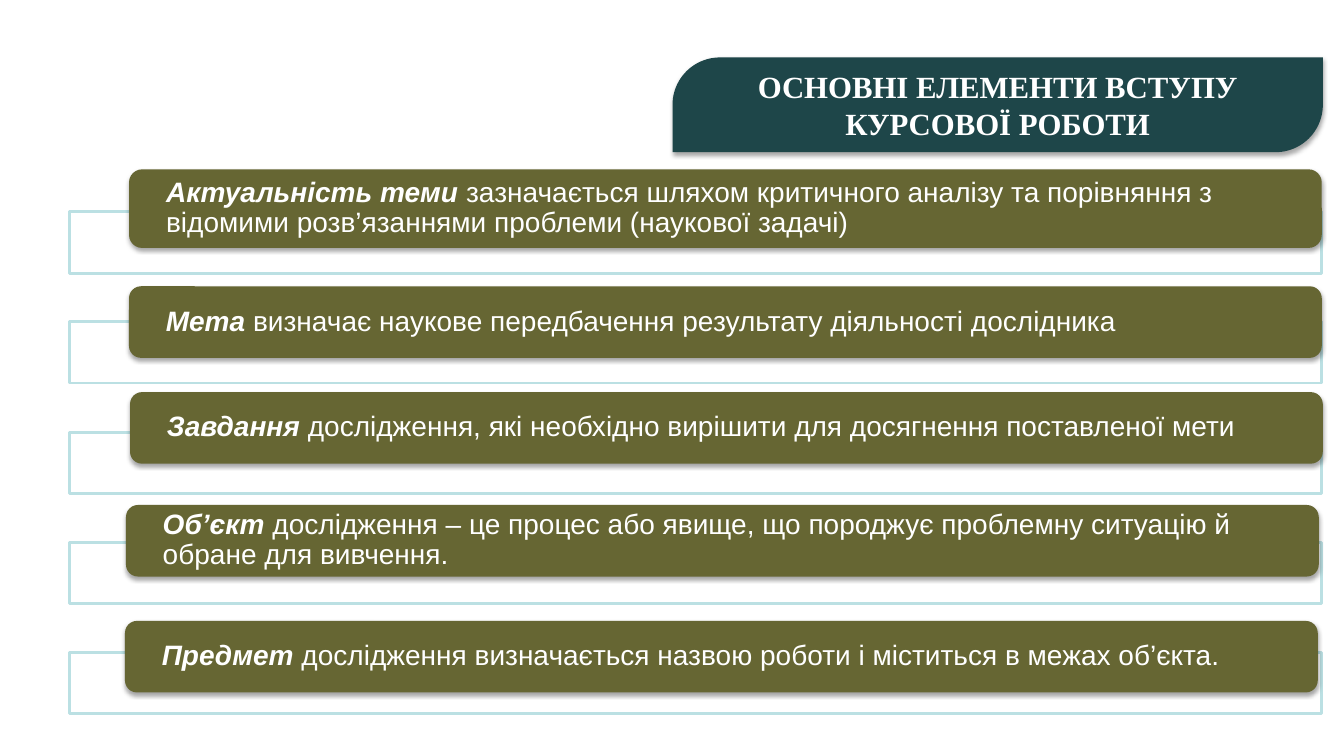
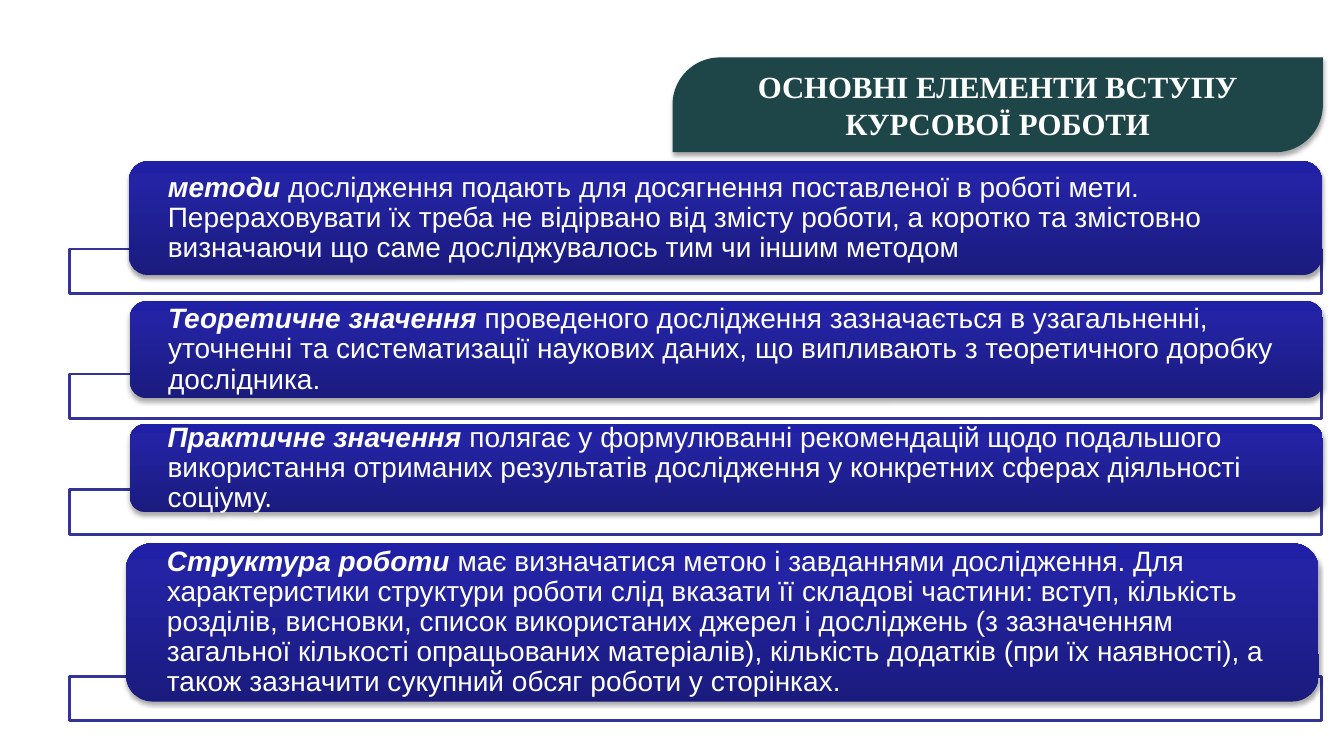
from copy import deepcopy

from lxml.etree import SubElement
from pptx import Presentation
from pptx.dml.color import RGBColor
from pptx.enum.shapes import MSO_SHAPE as SHAPE
from pptx.enum.text import MSO_ANCHOR as ANCHOR, PP_ALIGN as ALIGN
from pptx.oxml.ns import qn
from pptx.util import Inches, Pt

WIDTH, HEIGHT = 13.33, 7.5
WHITE, TEAL, OLIVE = "FFFFFF", "1E4649", "666633"
PALE_BLUE, INDIGO = "BBE0E3", "333399"
BLUE_GRADIENT = [(0, "1B1B7E"), (0.8, "2323A3"), (1, "2020A6")]
TITLE = "ОСНОВНІ ЕЛЕМЕНТИ ВСТУПУ КУРСОВОЇ РОБОТИ"
TITLE_BOX = (6.67, 0.57, 6.45, 0.94)
FRAME_LEFT, FRAME_WIDTH = 0.69, 12.42
BAR_WIDTH, BAR_INSET = 11.83, 0.33

INTRO_ROWS = [
    (2.1, (1.28, 1.68, 0.78), "Актуальність теми",
     " зазначається шляхом критичного аналізу та порівняння з відомими "
     "розв’язаннями проблеми (наукової задачі)"),
    (3.19, (1.28, 2.84, 0.71), "Мета ",
     "визначає наукове передбачення результату діяльності дослідника"),
    (4.29, (1.29, 3.89, 0.71), "Завдання",
     " дослідження, які необхідно вирішити для досягнення поставленої мети"),
    (5.38, (1.25, 5.01, 0.71), "Об’єкт",
     " дослідження – це процес або явище, що породжує проблемну ситуацію й "
     "обране для вивчення."),
    (6.47, (1.24, 6.16, 0.71), "Предмет",
     " дослідження визначається назвою роботи і міститься в межах об’єкта."),
]
METHOD_ROWS = [
    (2.47, (1.28, 1.6, 1.13), "методи",
     " дослідження подають для досягнення поставленої в роботі мети. "
     "Перераховувати їх треба не відірвано вiд змісту роботи, а коротко та "
     "змістовно визначаючи що саме досліджувалось тим чи іншим методом"),
    (3.71, (1.29, 2.99, 0.96), "Теоретичне значення",
     " проведеного дослідження зазначається в узагальненні, уточненні та "
     "систематизації наукових даних, що випливають з теоретичного доробку "
     "дослідника."),
    (4.86, (1.29, 4.21, 0.87), "Практичне значення",
     " полягає у формулюванні рекомендацій щодо подальшого використання "
     "отриманих результатів дослідження у конкретних сферах діяльності соціуму."),
    (6.71, (1.25, 5.39, 1.57), "Структура роботи ",
     "має визначатися метою і завданнями дослідження. Для характеристики "
     "структури роботи слід вказати її складові частини: вступ, кількість "
     "розділів, висновки, список використаних джерел і досліджень (з "
     "зазначенням загальної кількості опрацьованих матеріалів), кількість "
     "додатків (при їх наявності), а також зазначити сукупний обсяг роботи у "
     "сторінках."),
]


def rgb(value):
    """Turn a hex string into a colour."""
    return RGBColor.from_string(value)


def add_gradient(sp, stops):
    """Fill a shape with a gradient that runs from bottom to top."""
    sp.fill.gradient()
    sp.fill.gradient_angle = 90
    stop_list = sp._element.spPr.find(".//" + qn("a:gsLst"))
    while len(stop_list) < len(stops):
        stop_list.append(deepcopy(stop_list[0]))
    for stop, (position, color) in zip(sp.fill.gradient_stops, stops):
        stop.position = position
        stop.color.rgb = rgb(color)


def add_shadow(sp):
    """Give a shape a soft shadow below it."""
    effects = sp._element.spPr.find(qn("a:effectLst"))
    shadow = SubElement(effects, qn("a:outerShdw"), blurRad="40000",
                        dist="23000", dir="5400000", rotWithShape="0")
    color = SubElement(shadow, qn("a:srgbClr"), val="000000")
    SubElement(color, qn("a:alpha"), val="35000")


def add_box(s, kind, box, fill, line=None, shadow=False):
    """Add a preset shape with a solid or gradient fill."""
    sp = s.shapes.add_shape(kind, *map(Inches, box))
    sp.shadow.inherit = False
    if isinstance(fill, str):
        sp.fill.solid()
        sp.fill.fore_color.rgb = rgb(fill)
    else:
        add_gradient(sp, fill)
    if line:
        sp.line.color.rgb = rgb(line)
        sp.line.width = Pt(2)
    else:
        sp.line.fill.background()
    if shadow:
        add_shadow(sp)
    return sp


def add_text(p, text, font="Arial", size=20, color=WHITE, bold=False, italic=False):
    """Add a formatted run to a paragraph."""
    r = p.add_run()
    r.text = text
    r.font.name, r.font.size = font, Pt(size)
    r.font.bold, r.font.italic = bold, italic
    r.font.color.rgb = rgb(color)


def add_title(s, box):
    """Place the title plate with two rounded corners."""
    sp = add_box(s, SHAPE.ROUND_2_DIAG_RECTANGLE, box, TEAL, shadow=True)
    sp.adjustments[0], sp.adjustments[1] = 0.5, 0
    tf = sp.text_frame
    tf.word_wrap, tf.vertical_anchor = True, ANCHOR.MIDDLE
    p = tf.paragraphs[0]
    p.alignment = ALIGN.CENTER
    add_text(p, TITLE, font="Times New Roman", size=22, bold=True)


def add_bar(s, box, fill, term, text):
    """Place a rounded bar that opens with an emphasised term."""
    sp = add_box(s, SHAPE.ROUNDED_RECTANGLE, box, fill, shadow=True)
    tf = sp.text_frame
    tf.word_wrap, tf.vertical_anchor = True, ANCHOR.MIDDLE
    tf.margin_left = tf.margin_right = Inches(BAR_INSET)
    tf.margin_top = tf.margin_bottom = 0
    p = tf.paragraphs[0]
    p.alignment, p.line_spacing = ALIGN.LEFT, 0.9
    add_text(p, term, bold=True, italic=True)
    add_text(p, text)


def add_list_slide(prs, rows, frame_height, frame_color, bar_fill):
    """Build a slide of bars over outlined frames, with the title plate."""
    s = prs.slides.add_slide(prs.slide_layouts[6])
    for frame_top, (left, top, height), term, text in rows:
        frame = (FRAME_LEFT, frame_top, FRAME_WIDTH, frame_height)
        add_box(s, SHAPE.RECTANGLE, frame, WHITE, line=frame_color)
        add_bar(s, (left, top, BAR_WIDTH, height), bar_fill, term, text)
    add_title(s, TITLE_BOX)


def main():
    """Build and save the presentation."""
    prs = Presentation()
    prs.slide_width, prs.slide_height = Inches(WIDTH), Inches(HEIGHT)
    add_list_slide(prs, INTRO_ROWS, 0.61, PALE_BLUE, OLIVE)
    add_list_slide(prs, METHOD_ROWS, 0.44, INDIGO, BLUE_GRADIENT)
    prs.save("out.pptx")


if __name__ == "__main__":
    main()
